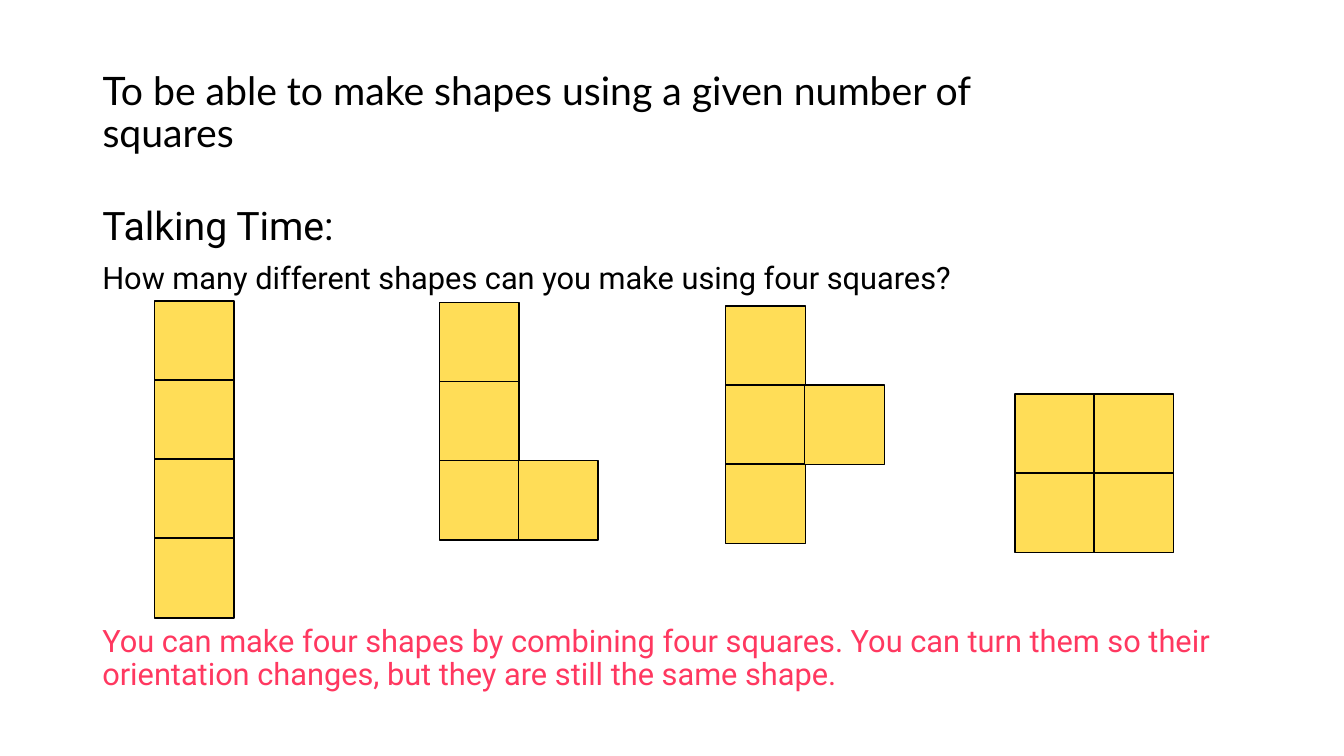
from pptx import Presentation
from pptx.dml.color import RGBColor
from pptx.enum.shapes import MSO_SHAPE
from pptx.enum.text import MSO_ANCHOR, MSO_AUTO_SIZE, PP_ALIGN
from pptx.util import Cm, Pt

BLACK, YELLOW, PINK = "000000", "FFDD57", "FF3860"
LEFT = 2.33
SIDE, STEP = 2.01, 1.99

TETROMINOES = [
    (3.89, 7.59, [(0, 0), (0, 1), (0, 2), (0, 3)]),
    (11.07, 7.62, [(0, 0), (0, 1), (0, 2), (1, 2)]),
    (18.29, 7.71, [(0, 0), (0, 1), (0, 2), (1, 1)]),
    (25.58, 9.93, [(0, 0), (1, 0), (0, 1), (1, 1)]),
]


def rgb(value):
    return RGBColor.from_string(value)


def write(tf, lines, font, anchor=MSO_ANCHOR.TOP):
    tf.word_wrap = True
    tf.auto_size = MSO_AUTO_SIZE.NONE
    tf.vertical_anchor = anchor
    tf.text = "\n".join(text for text, size, color in lines)
    for i, (p, (text, size, color)) in enumerate(zip(tf.paragraphs, lines)):
        p.alignment = PP_ALIGN.LEFT
        p.line_spacing = 0.9
        p.space_before = Pt(10 if i else 0)
        r = p.runs[0]
        r.font.name = font
        r.font.size = Pt(size)
        r.font.color.rgb = rgb(color)


def add_title(s, text):
    sp = s.shapes.title
    sp.left, sp.top, sp.width, sp.height = Cm(LEFT), Cm(1.02), Cm(24.38), Cm(3.68)
    write(sp.text_frame, [(text, 28, BLACK)], "Lato", MSO_ANCHOR.MIDDLE)


def add_text(s, top, height, lines):
    sp = s.shapes.add_textbox(Cm(LEFT), Cm(top), Cm(29.21), Cm(height))
    write(sp.text_frame, lines, "Roboto")


def add_tetromino(s, left, top, cells):
    for col, row in cells:
        sp = s.shapes.add_shape(
            MSO_SHAPE.RECTANGLE,
            Cm(left + col * STEP), Cm(top + row * STEP), Cm(SIDE), Cm(SIDE))
        sp.shadow.inherit = False
        sp.fill.solid()
        sp.fill.fore_color.rgb = rgb(YELLOW)
        sp.line.color.rgb = rgb(BLACK)
        sp.line.width = Pt(1)


def main():
    prs = Presentation()
    prs.slide_width, prs.slide_height = Cm(33.87), Cm(19.05)
    s = prs.slides.add_slide(prs.slide_layouts[5])
    add_title(s, "To be able to make shapes using a given number of squares")
    add_text(s, 5.08, 2.5, [
        ("Talking Time:", 28, BLACK),
        ("How many different shapes can you make using four squares?", 22, BLACK),
    ])
    add_text(s, 15.65, 2.1, [
        ("You can make four shapes by combining four squares. You can turn them "
         "so their orientation changes, but they are still the same shape.", 22, PINK),
    ])
    for left, top, cells in TETROMINOES:
        add_tetromino(s, left, top, cells)
    prs.save("out.pptx")


if __name__ == "__main__":
    main()
